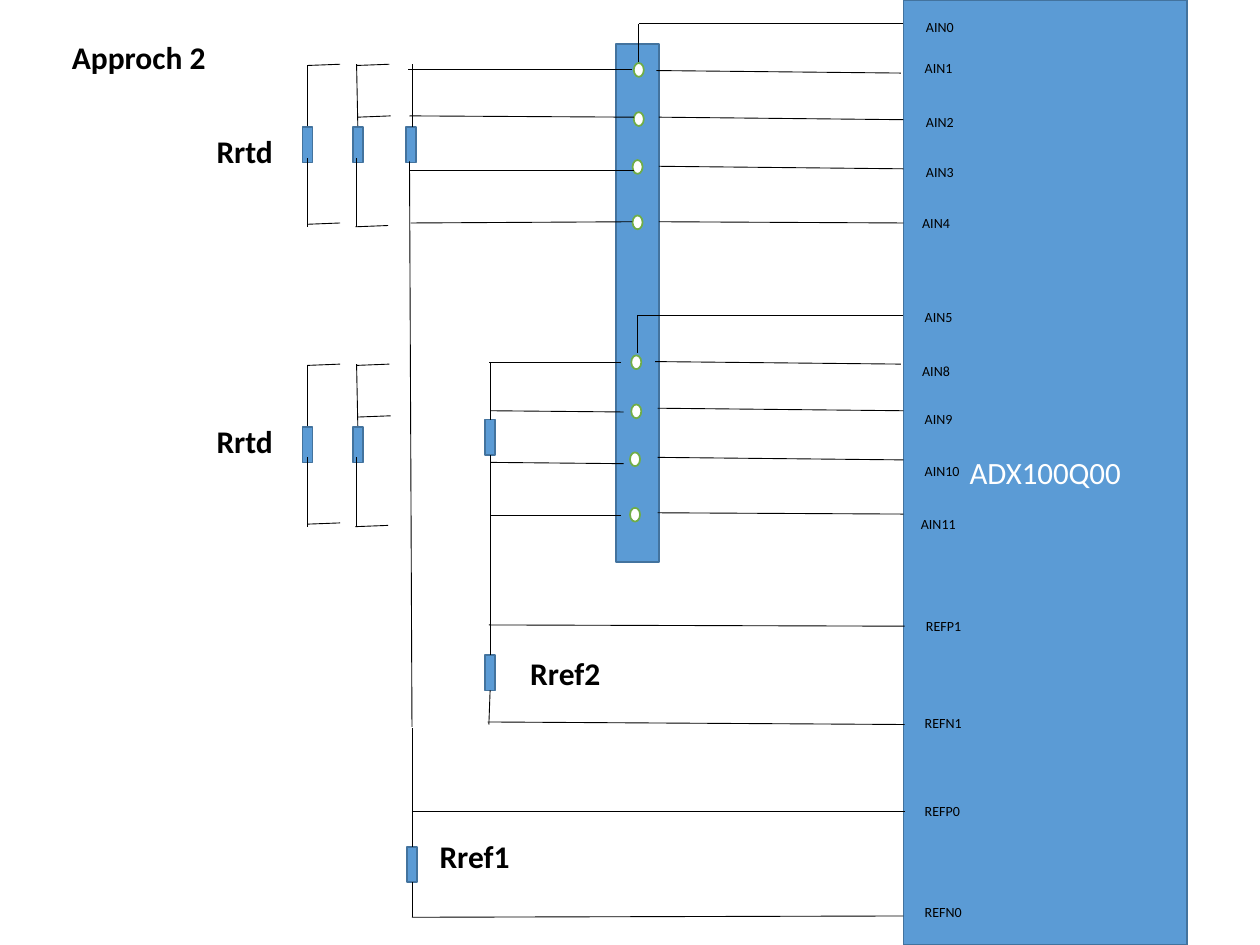
from lxml import etree
from pptx import Presentation
from pptx import util as u
from pptx.dml.color import RGBColor
from pptx.enum import shapes, text
from pptx.oxml.ns import qn

PX = 9144  # 100 px to the inch
BLUE = RGBColor(0x5B, 0x9B, 0xD5)
DARK_BLUE = RGBColor(0x43, 0x73, 0x9E)
GREEN = RGBColor(0x70, 0xAD, 0x47)
WHITE = RGBColor(0xFF, 0xFF, 0xFF)
BLACK = RGBColor(0, 0, 0)
RECTANGLE = shapes.MSO_SHAPE.RECTANGLE
OVAL = shapes.MSO_SHAPE.OVAL


def px(*lengths):
    return [u.Emu(length * PX) for length in lengths]


def add_run(paragraph, words, size, color, bold=False):
    run = paragraph.add_run()
    run.text = words
    run.font.name = "Calibri"
    run.font.size = u.Pt(size)
    run.font.bold = bold
    run.font.color.rgb = color


def add_block(slide, kind, left, top, width, height, fill=BLUE, line=DARK_BLUE):
    shape = slide.shapes.add_shape(kind, *px(left, top, width, height))
    shape.shadow.inherit = False
    shape.fill.solid()
    shape.fill.fore_color.rgb = fill
    shape.line.color.rgb = line
    shape.line.width = u.Pt(1)
    return shape


def add_resistor(slide, left, top):
    add_block(slide, RECTANGLE, left, top, 8, 28)


def add_wires(slide, left, top, wires):
    """Draw wires given as (x1, y1, x2, y2) from the corner of a region."""
    for x1, y1, x2, y2 in wires:
        wire = slide.shapes.add_connector(
            shapes.MSO_CONNECTOR.STRAIGHT,
            *px(left + x1, top + y1, left + x2, top + y2))
        wire.line.color.rgb = BLACK
        wire.line.width = u.Pt(0.5)
        etree.SubElement(wire._element.spPr, qn("a:effectLst"))


def add_label(slide, words, left, top, width, height, size=18, bold=True):
    box = slide.shapes.add_textbox(*px(left, top, width, height))
    frame = box.text_frame
    frame.word_wrap = True
    frame.auto_size = text.MSO_AUTO_SIZE.SHAPE_TO_FIT_TEXT
    add_run(frame.paragraphs[0], words, size, BLACK, bold)


def add_title(slide, left, top, width, height):
    title = slide.shapes.title
    title.left, title.top, title.width, title.height = px(left, top, width, height)
    frame = title.text_frame
    frame.word_wrap = True
    frame.auto_size = text.MSO_AUTO_SIZE.NONE
    frame.vertical_anchor = text.MSO_ANCHOR.TOP
    frame.paragraphs[0].alignment = text.PP_ALIGN.LEFT
    add_run(frame.paragraphs[0], "Approch 2", 18, BLACK, True)


def add_converter(slide, left, top, width, height):
    chip = add_block(slide, RECTANGLE, left, top, width, height)
    chip.text_frame.vertical_anchor = text.MSO_ANCHOR.MIDDLE
    paragraph = chip.text_frame.paragraphs[0]
    paragraph.alignment = text.PP_ALIGN.CENTER
    add_run(paragraph, "ADX100Q00", 17.7, WHITE)


def add_pin_names(slide, left, top):
    pins = [("AIN0", 8, 10), ("AIN1", 7, 42), ("AIN2", 8, 85), ("AIN3", 8, 125),
            ("AIN4", 5, 165), ("AIN5", 7, 240), ("AIN8", 5, 283), ("AIN9", 7, 321),
            ("AIN10", 7, 362), ("AIN11", 4, 404), ("REFP1", 8, 485),
            ("REFN1", 7, 562), ("REFP0", 7, 632), ("REFN0", 7, 712)]
    for name, x, y in pins:
        add_label(slide, name, left + x, top + y, 62, 23, 8, False)


def add_terminal_strip(slide, left, top, width, height):
    add_block(slide, RECTANGLE, left, top, width, height)
    terminals = [(14, 15), (14, 54), (13, 92), (13, 136),
                 (12, 247), (12, 286), (11, 324), (11, 368)]
    for x, y in terminals:
        add_block(slide, OVAL, left + x, top + y, 8, 11, WHITE, GREEN)


def add_strip_outputs(slide, left, top, width):
    """Wire one half of the strip to the converter, first terminal doubled."""
    wires = [(0, 0, width, 0), (0, 0, 0, 30)]  # excitation input
    wires += [(14, 37, width - 2, 39), (16, 74, width, 76),
              (16, 113, width, 115), (16, 157, width, 158)]
    add_wires(slide, left, top, wires)


def add_spare_sensors(slide, left, top):
    """Two-wire and three-wire sensors beside each other."""
    two_wire = [(4, 49, 4, 1), (4, 1, 30, 0), (4, 129, 4, 74), (4, 127, 30, 126)]
    three_wire = [(44, 49, 43, 0), (43, 1, 69, 0), (44, 42, 70, 41),
                  (43, 129, 43, 74), (42, 129, 68, 128)]
    for x in (0, 40):
        add_resistor(slide, left + x, top + 50)
    add_wires(slide, left, top, two_wire + three_wire)


def add_first_chain(slide, left, top):
    """Four-wire sensor in series with Rref1."""
    add_resistor(slide, left, top + 50)
    add_resistor(slide, left + 1, top + 621)
    add_wires(slide, left, top, [
        (5, 50, 5, 0), (5, 526, 3, 77), (5, 621, 5, 527), (5, 649, 5, 677),
        (180, 4, 2, 4), (181, 42, 3, 41), (181, 84, 3, 84), (180, 125, 4, 126),
        (5, 593, 396, 593), (5, 677, 395, 676)])
    add_label(slide, "Rref1", left + 17, top + 608, 84, 40)


def add_second_chain(slide, left, top):
    """Four-wire sensor in series with Rref2."""
    add_resistor(slide, left, top + 46)
    add_resistor(slide, left, top + 233)
    add_wires(slide, left, top, [
        (4, 46, 4, 0), (4, 233, 4, 74), (4, 261, 3, 288),
        (108, 1, 3, 1), (110, 40, 4, 39), (110, 81, 4, 80), (108, 122, 4, 122),
        (3, 209, 333, 210), (2, 286, 333, 288)])
    add_label(slide, "Rref2", left + 26, top + 227, 84, 40)


def main():
    presentation = Presentation()
    presentation.slide_width, presentation.slide_height = px(1000, 750)
    slide = presentation.slides.add_slide(presentation.slide_layouts[5])

    add_title(slide, 47, 25, 237, 40)
    # Converter and terminal strip
    add_converter(slide, 717, 0, 225, 750)
    add_terminal_strip(slide, 489, 35, 34, 411)
    add_strip_outputs(slide, 507, 19, 210)
    add_strip_outputs(slide, 506, 250, 211)
    # Sensor chains
    add_first_chain(slide, 322, 51)
    add_second_chain(slide, 385, 287)
    # Spare sensors
    for sensor_top, label_top in ((51, 100), (289, 330)):
        add_spare_sensors(slide, 240, sensor_top)
        add_label(slide, "Rrtd", 162, label_top, 78, 40)
    add_pin_names(slide, 717, 0)

    presentation.save("out.pptx")


if __name__ == "__main__":
    main()
